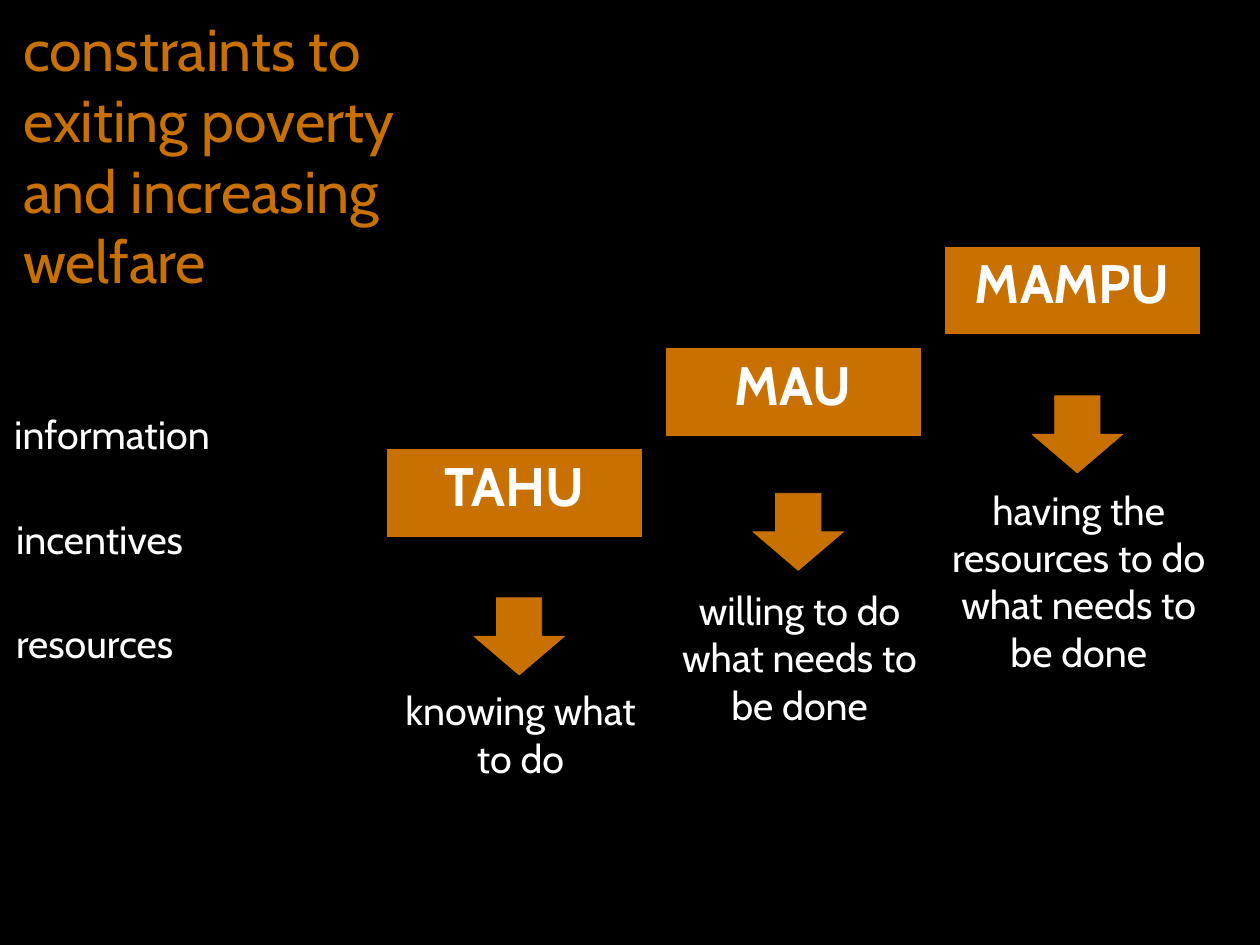
from dataclasses import dataclass

from pptx import Presentation
from pptx.dml.color import RGBColor
from pptx.enum.shapes import MSO_SHAPE as Shp
from pptx.enum.text import MSO_ANCHOR as Anchor, MSO_AUTO_SIZE as Fit, PP_ALIGN as Align
from pptx.shapes.autoshape import Shape
from pptx.shapes.shapetree import GroupShapes, SlideShapes
from pptx.util import Inches, Length, Pt

WIDTH, HEIGHT = Inches(14.22), Inches(10.67)
ORANGE, WHITE, BLACK = "C97100", "FFFFFF", "000000"
FONT = "Cabin"
COLUMN = 22.15
BOX_RISE, CAPTION_RISE, LABEL_ROW = 10.73, 8.11, 11.06


@dataclass(frozen=True)
class Area:
    """A rectangle in percent of the slide's width and height."""
    x: float
    y: float
    w: float
    h: float

    def shift(self, dx: float, dy: float) -> "Area":
        """Return the area moved by the given percentages."""
        return Area(self.x + dx, self.y + dy, self.w, self.h)

    def lengths(self) -> tuple[Length, Length, Length, Length]:
        """Return left, top, width and height as slide lengths."""
        return (Length(round(WIDTH * self.x / 100)), Length(round(HEIGHT * self.y / 100)),
                Length(round(WIDTH * self.w / 100)), Length(round(HEIGHT * self.h / 100)))


@dataclass(frozen=True)
class Step:
    """One step of the rising staircase."""
    name: str
    meaning: str
    arrow_y: float


TITLE = Area(1.83, 0.56, 37.13, 39.08)
LABEL = Area(1.27, 40.39, 40.01, LABEL_ROW)
BOX = Area(30.59, 47.42, 20.46, 9.56)
CAPTION = Area(30.45, 61.76, 21.73, 31.77)
ARROW = Area(37.62, 0, 7.17, 8.15)

LABELS = [("information", -0.14), ("incentives", 0), ("resources", 0)]
STEPS = [
    Step("TAHU", "knowing what to do", 63.26),
    Step("MAU", "willing to do what needs to be done", 52.2),
    Step("MAMPU", "having the resources to do what needs to be done", 41.89),
]


def rgb(color: str) -> RGBColor:
    """Turn a hex string into a colour."""
    return RGBColor.from_string(color)


def write(sp: Shape, text: str, *, size: float = 32, color: str = WHITE, bold: bool = False,
          align: Align = Align.LEFT, anchor: Anchor = Anchor.MIDDLE,
          inset: float = 0, top: float = 0) -> None:
    """Fill a shape with one formatted paragraph."""
    tf = sp.text_frame
    tf.word_wrap, tf.auto_size, tf.vertical_anchor = True, Fit.NONE, anchor
    tf.margin_left = tf.margin_right = Inches(inset)
    tf.margin_top = tf.margin_bottom = Inches(top)
    p = tf.paragraphs[0]
    p.alignment = align
    r = p.add_run()
    r.text = text
    r.font.name, r.font.size, r.font.bold = FONT, Pt(size), bold
    r.font.color.rgb = rgb(color)


def add_block(shapes: SlideShapes | GroupShapes, kind: Shp, area: Area,
              line: str, width: float) -> Shape:
    """Add an orange preset shape."""
    sp = shapes.add_shape(kind, *area.lengths())
    sp.shadow.inherit = False
    sp.fill.solid()
    sp.fill.fore_color.rgb = rgb(ORANGE)
    sp.line.color.rgb = rgb(line)
    sp.line.width = Pt(width)
    return sp


def add_step(shapes: SlideShapes, step: Step, i: int) -> None:
    """Add a step's box with its grouped caption and arrow."""
    box = add_block(shapes, Shp.RECTANGLE, BOX.shift(i * COLUMN, -i * BOX_RISE), BLACK, 2)
    write(box, step.name, size=44, bold=True, align=Align.CENTER, anchor=Anchor.TOP,
          inset=0.1, top=0.05)
    group = shapes.add_group_shape().shapes
    caption = group.add_textbox(*CAPTION.shift(i * COLUMN, -i * CAPTION_RISE).lengths())
    write(caption, step.meaning, align=Align.CENTER)
    add_block(group, Shp.DOWN_ARROW, ARROW.shift(i * COLUMN, step.arrow_y), ORANGE, 0.75)


def main() -> None:
    """Build and save the slide."""
    prs = Presentation()
    prs.slide_width, prs.slide_height = WIDTH, HEIGHT
    s = prs.slides.add_slide(prs.slide_layouts[5])
    s.background.fill.solid()
    s.background.fill.fore_color.rgb = rgb(BLACK)

    title = s.shapes.title
    title.left, title.top, title.width, title.height = TITLE.lengths()
    write(title, "constraints to exiting poverty and increasing welfare",
          size=48, color=ORANGE, anchor=Anchor.TOP, top=0.08)

    for i, (text, dx) in enumerate(LABELS):
        write(s.shapes.add_textbox(*LABEL.shift(dx, i * LABEL_ROW).lengths()), text)
    for i, step in enumerate(STEPS):
        add_step(s.shapes, step, i)

    prs.save("out.pptx")


if __name__ == "__main__":
    main()
